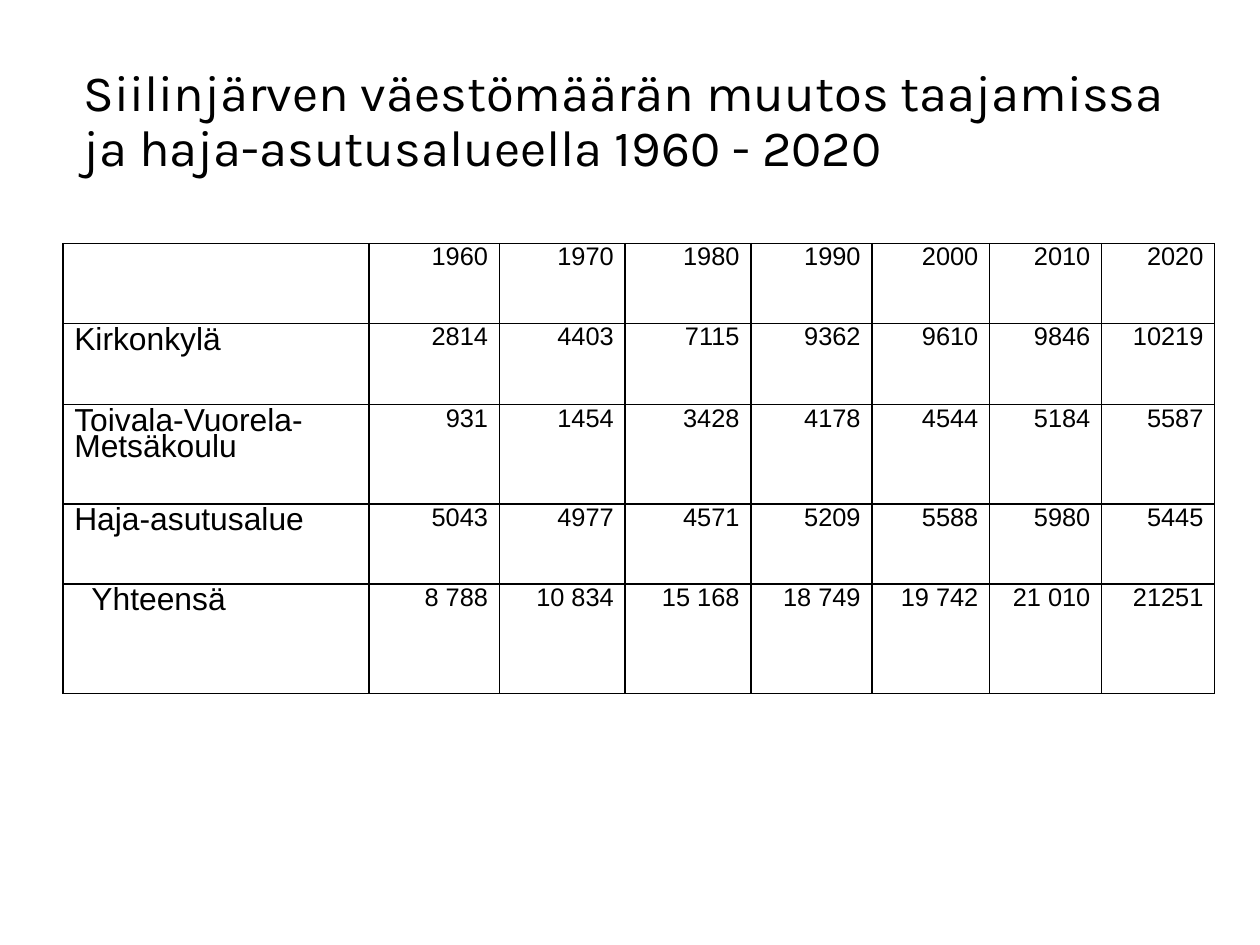
import pptx
import pptx.dml.color
import pptx.enum.text
import pptx.oxml
import pptx.oxml.ns
import pptx.util

EMU_PER_PX = 9144  # 100 px to the inch
SLIDE_SIZE = (10080625, 7559675)  # 28 by 21 cm screen format, in EMU
BLACK = "000000"
BORDER_SIDES = ("lnL", "lnR", "lnT", "lnB")
BORDER_WIDTH = pptx.util.Pt(1)

TITLE = "Siilinjärven väestömäärän muutos taajamissa ja haja-asutusalueella 1960 - 2020"
POPULATION = [
    ["", "1960", "1970", "1980", "1990", "2000", "2010", "2020"],
    ["Kirkonkylä", "2814", "4403", "7115", "9362", "9610", "9846", "10219"],
    ["Toivala-Vuorela-Metsäkoulu", "931", "1454", "3428", "4178", "4544", "5184", "5587"],
    ["Haja-asutusalue", "5043", "4977", "4571", "5209", "5588", "5980", "5445"],
    ["Yhteensä", "8 788", "10 834", "15 168", "18 749", "19 742", "21 010", "21251"],
]
COLUMN_WIDTHS = [268, 114, 110, 110, 106, 103, 98, 99]
ROW_HEIGHTS = [70, 71, 87, 70, 96]


def px(length):
    return pptx.util.Emu(length * EMU_PER_PX)


def color(hex_value):
    return pptx.dml.color.RGBColor.from_string(hex_value)


def format_text(frame, font, size, spacing, alignment):
    for para in frame.paragraphs:
        para.alignment = alignment
        para.line_spacing = spacing
        for span in para.runs:
            span.font.name = font
            span.font.size = pptx.util.Pt(size)
            span.font.color.rgb = color(BLACK)


def add_borders(cell):
    properties = cell._tc.get_or_add_tcPr()
    namespace = pptx.oxml.ns.nsdecls("a")
    for side in BORDER_SIDES:
        properties.append(pptx.oxml.parse_xml(
            f'<a:{side} {namespace} w="{BORDER_WIDTH}"><a:solidFill>'
            f'<a:srgbClr val="{BLACK}"/></a:solidFill></a:{side}>'))


def place_title(page, left, top, width, height):
    box = page.shapes.title
    box.left, box.top, box.width, box.height = map(px, (left, top, width, height))
    frame = box.text_frame
    frame.text = TITLE
    frame.word_wrap = True
    frame.auto_size = pptx.enum.text.MSO_AUTO_SIZE.NONE
    frame.vertical_anchor = pptx.enum.text.MSO_ANCHOR.MIDDLE
    frame.margin_left = frame.margin_right = px(10)
    frame.margin_top, frame.margin_bottom = px(3), px(5)
    format_text(frame, "Karla", 32, 0.9, pptx.enum.text.PP_ALIGN.LEFT)


def fill_cell(cell, text, is_label):
    align = pptx.enum.text.PP_ALIGN
    cell.text_frame.text = text
    cell.margin_left = cell.margin_right = px(10)
    cell.margin_top = cell.margin_bottom = px(5)
    cell.vertical_anchor = pptx.enum.text.MSO_ANCHOR.TOP
    format_text(cell.text_frame, "Arial", 20 if is_label else 16, 0.74,
                align.LEFT if is_label else align.RIGHT)
    add_borders(cell)
    cell.fill.background()


def place_population_table(page, left, top):
    frame = page.shapes.add_table(
        len(ROW_HEIGHTS), len(COLUMN_WIDTHS), px(left), px(top),
        px(sum(COLUMN_WIDTHS)), px(sum(ROW_HEIGHTS)))
    table = frame.table
    table.first_row = table.horz_banding = False
    for column, width in zip(table.columns, COLUMN_WIDTHS):
        column.width = px(width)
    for row, height, values in zip(table.rows, ROW_HEIGHTS, POPULATION):
        row.height = px(height)
        for index, (cell, text) in enumerate(zip(row.cells, values)):
            fill_cell(cell, text, is_label=index == 0)
    # The label of the total row is indented
    table.cell(len(ROW_HEIGHTS) - 1, 0).margin_left = px(25)


def main():
    deck = pptx.Presentation()
    deck.slide_width, deck.slide_height = map(pptx.util.Emu, SLIDE_SIZE)
    page = deck.slides.add_slide(deck.slide_layouts.get_by_name("Title Only"))
    place_title(page, 63, 39, 992, 138)
    place_population_table(page, 55, 213)
    deck.save("out.pptx")


if __name__ == "__main__":
    main()
